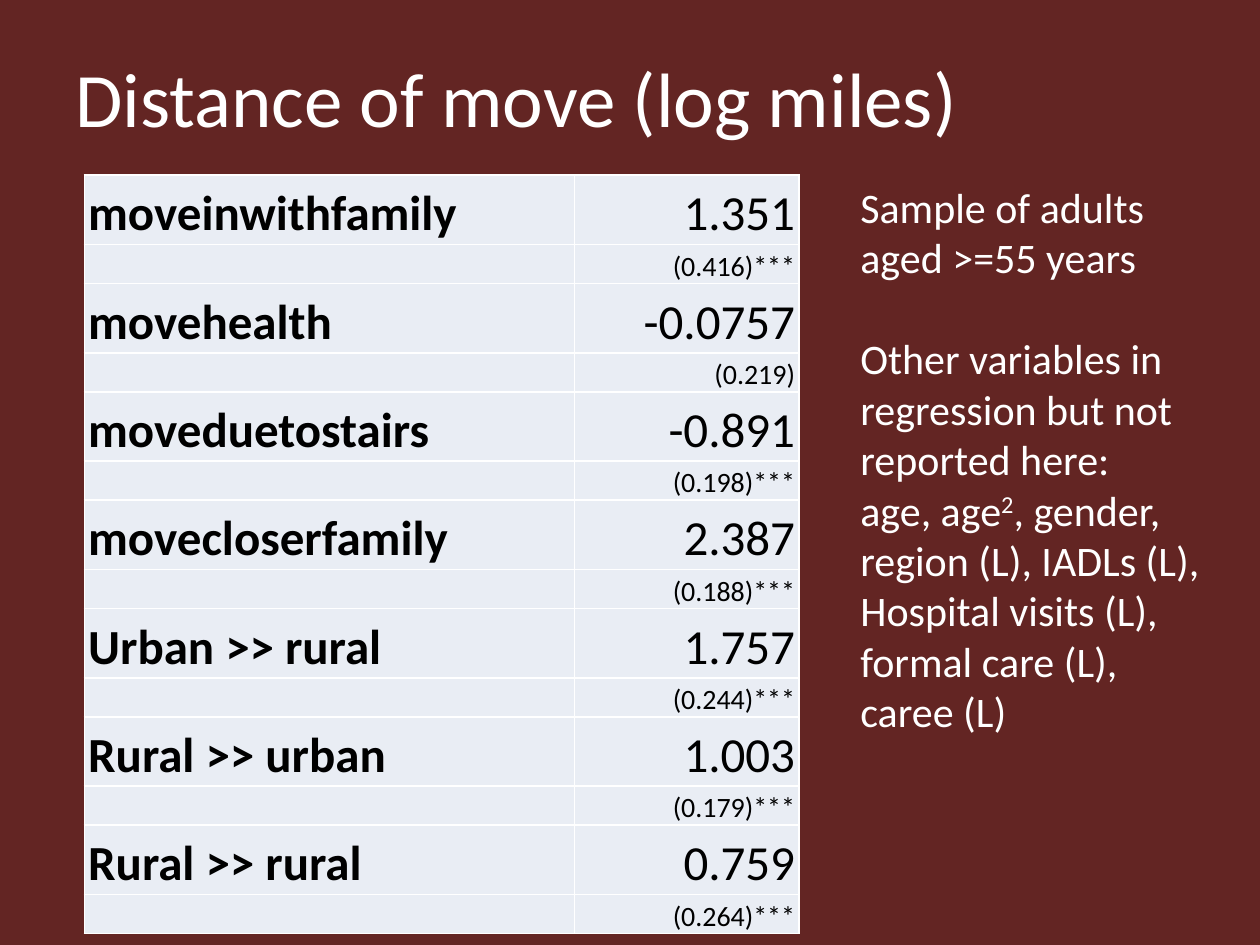
import pptx
import pptx.util
import pptx.dml.color
import pptx.enum.text
import pptx.oxml.ns
from lxml import etree

Inches, Pt = pptx.util.Inches, pptx.util.Pt
RGBColor = pptx.dml.color.RGBColor
PP_ALIGN = pptx.enum.text.PP_ALIGN
MSO_ANCHOR = pptx.enum.text.MSO_ANCHOR
qn = pptx.oxml.ns.qn

# Content
TITLE = "Distance of move (log miles)"
ESTIMATES = [  # variable, coefficient, standard error
    ("moveinwithfamily", "1.351", "(0.416)***"),
    ("movehealth", "-0.0757", "(0.219)"),
    ("moveduetostairs", "-0.891", "(0.198)***"),
    ("movecloserfamily", "2.387", "(0.188)***"),
    ("Urban >> rural", "1.757", "(0.244)***"),
    ("Rural >> urban", "1.003", "(0.179)***"),
    ("Rural >> rural", "0.759", "(0.264)***"),
]
NOTES = [  # space before, then (text, superscript) runs
    (0, [("Sample of adults aged >=55 years", False)]),
    (29, [("Other variables in regression but not reported here:", False)]),
    (0, [("age, age", False), ("2", True),
         (", gender, region (L), IADLs (L), Hospital visits (L), "
          "formal care (L), caree (L)", False)]),
]

# Style
FONT = "Calibri"
MAROON = RGBColor(0x63, 0x25, 0x23)
WHITE = RGBColor(0xFF, 0xFF, 0xFF)
BLACK = RGBColor(0, 0, 0)
PALE_BLUE = RGBColor(0xE9, 0xED, 0xF4)

# Layout, in inches
TOP = 1.39
TABLE_LEFT = 0.67
COLUMN_WIDTHS = (3.89, 1.78)
COEFFICIENT_HEIGHT, ERROR_HEIGHT = 0.55, 0.31


def add_run(paragraph, text, size, color, bold=False):
    run = paragraph.add_run()
    run.text = text
    run.font.name = FONT
    run.font.size = Pt(size)
    run.font.color.rgb = color
    run.font.bold = bold
    return run


def add_text_frame(slide, left, top, width, height):
    frame = slide.shapes.add_textbox(
        Inches(left), Inches(top), Inches(width), Inches(height)).text_frame
    frame.word_wrap = True
    return frame


def style_cell(cell):
    cell.margin_left = cell.margin_right = Inches(0.03)
    cell.margin_top = cell.margin_bottom = 0
    properties = cell._tc.get_or_add_tcPr()
    for side in ("a:lnL", "a:lnR", "a:lnT", "a:lnB"):
        line = etree.SubElement(properties, qn(side), w=str(Pt(1)))
        fill = etree.SubElement(line, qn("a:solidFill"))
        etree.SubElement(fill, qn("a:srgbClr"), val=str(WHITE))
    cell.fill.solid()
    cell.fill.fore_color.rgb = PALE_BLUE


def fill_cell(cell, text, size, bold=False, align=PP_ALIGN.LEFT):
    paragraph = cell.text_frame.paragraphs[0]
    paragraph.alignment = align
    paragraph.line_spacing = 1.15
    add_run(paragraph, text, size, BLACK, bold)


def add_estimates(slide):
    pair_height = COEFFICIENT_HEIGHT + ERROR_HEIGHT
    table = slide.shapes.add_table(
        2 * len(ESTIMATES), len(COLUMN_WIDTHS), Inches(TABLE_LEFT), Inches(TOP),
        Inches(sum(COLUMN_WIDTHS)), Inches(pair_height * len(ESTIMATES))).table
    table.first_row = table.horz_banding = False
    for column, width in zip(table.columns, COLUMN_WIDTHS):
        column.width = Inches(width)
    for cell in table.iter_cells():
        style_cell(cell)
    for i, (variable, coefficient, error) in enumerate(ESTIMATES):
        row = 2 * i
        table.rows[row].height = Inches(COEFFICIENT_HEIGHT)
        table.rows[row + 1].height = Inches(ERROR_HEIGHT)
        fill_cell(table.cell(row, 0), variable, 28, bold=True)
        fill_cell(table.cell(row, 1), coefficient, 28, align=PP_ALIGN.RIGHT)
        fill_cell(table.cell(row + 1, 1), error, 16, align=PP_ALIGN.RIGHT)


def add_notes(slide):
    frame = add_text_frame(slide, 6.73, TOP, 2.91, 4.54)
    for i, (space, runs) in enumerate(NOTES):
        paragraph = frame.add_paragraph() if i else frame.paragraphs[0]
        if space:
            paragraph.space_before = Pt(space)
        for text, superscript in runs:
            run = add_run(paragraph, text, 24, WHITE)
            if superscript:
                run._r.get_or_add_rPr().set("baseline", "30000")


def main():
    deck = pptx.Presentation()
    deck.slide_width, deck.slide_height = Inches(10), Inches(7.5)
    slide = deck.slides.add_slide(deck.slide_layouts[6])
    slide.background.fill.solid()
    slide.background.fill.fore_color.rgb = MAROON

    # Title
    title = add_text_frame(slide, 0.5, 0.3, 9, 0.93)
    title.vertical_anchor = MSO_ANCHOR.MIDDLE
    add_run(title.paragraphs[0], TITLE, 44, WHITE)

    # Regression table and side notes
    add_estimates(slide)
    add_notes(slide)
    deck.save("out.pptx")


if __name__ == "__main__":
    main()
